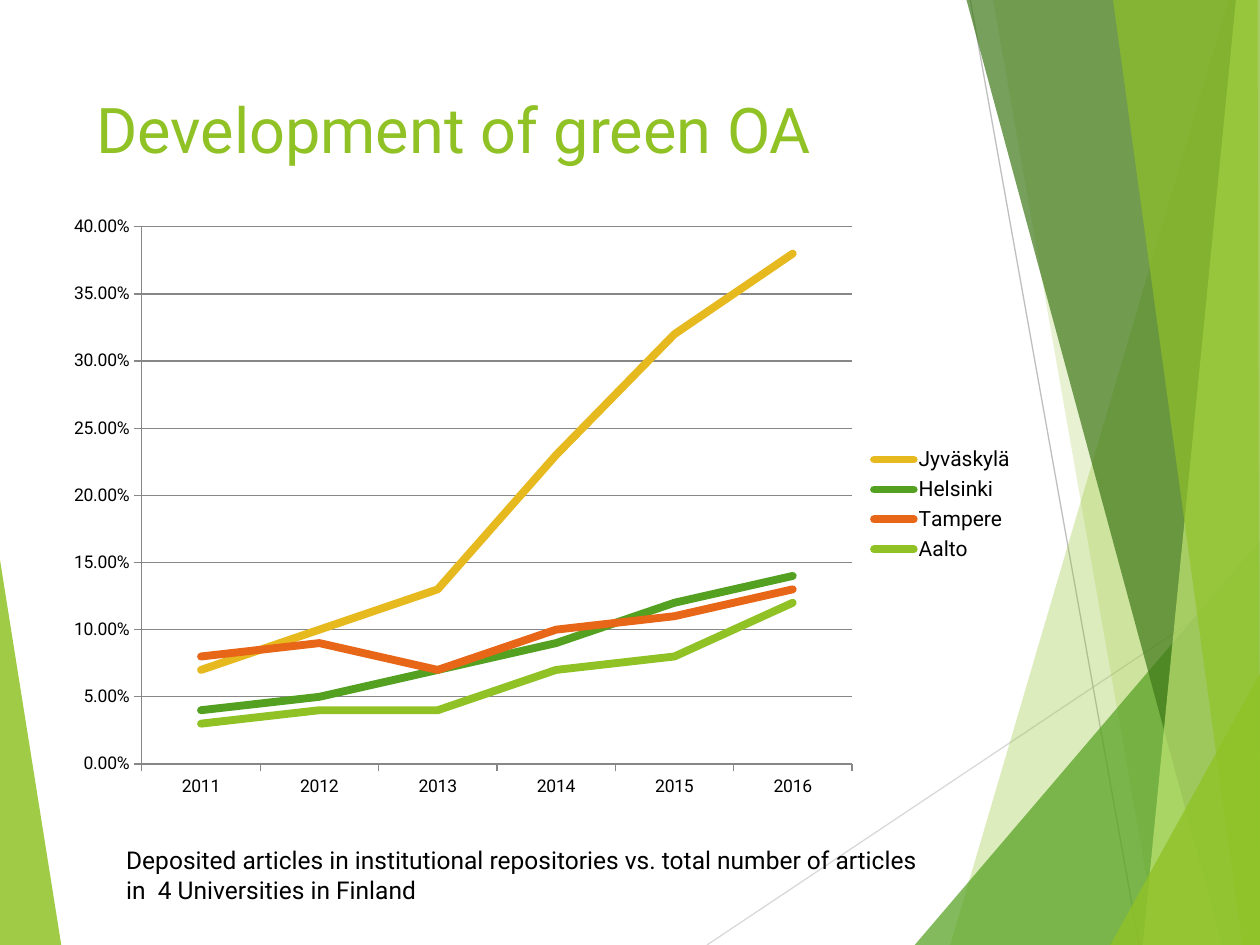
import pptx
import pptx.chart.data
import pptx.dml.color
import pptx.enum.chart
import pptx.enum.shapes
import pptx.enum.text
import pptx.oxml
import pptx.oxml.ns
import pptx.util


class Theme:
    font = "Roboto"
    lime, green, forest, pale = "90C226", "54A021", "3F7819", "C0E474"
    gold, orange = "E6B91E", "E76618"
    black, axis, light_line, dark_line = "000000", "878787", "D9D9D9", "BFBFBF"
    title_size, caption_size, legend_size, axis_size = 36, 14, 12, 10


def rgb(value):
    return pptx.dml.color.RGBColor.from_string(value)


def set_font(font, size, color):
    font.name = Theme.font
    font.size = pptx.util.Pt(size)
    font.color.rgb = rgb(color)


WIDTH, HEIGHT = 720, 540
presentation = pptx.Presentation()
presentation.slide_width = pptx.util.Pt(WIDTH)
presentation.slide_height = pptx.util.Pt(HEIGHT)
slide = presentation.slides.add_slide(presentation.slide_layouts[6])

# Thin background lines
for *ends, color in [
    (404, HEIGHT, WIDTH, 329, Theme.light_line),
    (554.5, 0, 651, HEIGHT, Theme.dark_line),
]:
    ray = slide.shapes.add_connector(
        pptx.enum.shapes.MSO_CONNECTOR.STRAIGHT, *map(pptx.util.Pt, ends))
    ray.line.color.rgb = rgb(color)
    ray.line.width = pptx.util.Pt(0.75)
    ray._element.spPr.append(pptx.oxml.parse_xml(
        f'<a:effectLst {pptx.oxml.ns.nsdecls("a")}/>'))

# Translucent facets: colour, opacity in percent, corners
facets = [
    (Theme.lime, 85, [(0, 320), (35, HEIGHT), (0, HEIGHT)]),
    (Theme.lime, 30, [(702, 0), (543, HEIGHT), (WIDTH, HEIGHT), (WIDTH, 0)]),
    (Theme.lime, 20, [(567.5, 0), (662, HEIGHT), (WIDTH, HEIGHT), (WIDTH, 0)]),
    (Theme.green, 72, [(522.7, HEIGHT), (WIDTH, 309), (WIDTH, HEIGHT)]),
    (Theme.forest, 70, [(552.3, 0), (698.4, HEIGHT), (WIDTH, HEIGHT), (WIDTH, 0)]),
    (Theme.pale, 70, [(706.3, 0), (653, HEIGHT), (WIDTH, HEIGHT), (WIDTH, 0)]),
    (Theme.lime, 65, [(636, 0), (710, HEIGHT), (WIDTH, HEIGHT), (718.6, 0)]),
    (Theme.lime, 80, [(634.5, HEIGHT), (WIDTH, 385), (WIDTH, HEIGHT)]),
]
for color, opacity, corners in facets:
    start, *others = [(pptx.util.Pt(x), pptx.util.Pt(y)) for x, y in corners]
    outline = slide.shapes.build_freeform(*start)
    outline.add_line_segments(others, close=True)
    facet = outline.convert_to_shape()
    facet.shadow.inherit = False
    facet.line.fill.background()
    facet.fill.solid()
    facet.fill.fore_color.rgb = rgb(color)
    fill_color = facet._element.spPr.find(".//" + pptx.oxml.ns.qn("a:srgbClr"))
    fill_color.append(pptx.oxml.parse_xml(
        f'<a:alpha {pptx.oxml.ns.nsdecls("a")} val="{opacity * 1000}"/>'))

# Title and caption
for area, wrap, size, color, lines in [
    ((48, 48, 500, 104), True, Theme.title_size, Theme.lime, ["Development of green OA"]),
    ((65, 479.5, 486, 41), False, Theme.caption_size, Theme.black,
     ["Deposited articles in institutional repositories vs. total number of articles",
      "in  4 Universities in Finland"]),
]:
    frame = slide.shapes.add_textbox(*map(pptx.util.Pt, area)).text_frame
    frame.word_wrap = wrap
    frame.vertical_anchor = pptx.enum.text.MSO_ANCHOR.TOP
    for number, line in enumerate(lines):
        paragraph = frame.add_paragraph() if number else frame.paragraphs[0]
        run = paragraph.add_run()
        run.text = line
        set_font(run.font, size, color)

# Share of deposited articles by university
universities = [
    ("Jyväskylä", Theme.gold, [0.07, 0.1, 0.13, 0.23, 0.32, 0.38]),
    ("Helsinki", Theme.green, [0.04, 0.05, 0.07, 0.09, 0.12, 0.14]),
    ("Tampere", Theme.orange, [0.08, 0.09, 0.07, 0.1, 0.11, 0.13]),
    ("Aalto", Theme.lime, [0.03, 0.04, 0.04, 0.07, 0.08, 0.12]),
]
shares = pptx.chart.data.CategoryChartData(number_format="0.00%")
shares.categories = [str(year) for year in range(2011, 2017)]
for name, _, values in universities:
    shares.add_series(name, values)
chart = slide.shapes.add_chart(
    pptx.enum.chart.XL_CHART_TYPE.LINE,
    *map(pptx.util.Pt, (31, 115.8, 556, 345)), shares).chart
set_font(chart.font, Theme.axis_size, Theme.black)
chart.has_title = False
chart.plots[0].vary_by_categories = False
for series, (_, color, _) in zip(chart.plots[0].series, universities):
    series.smooth = False
    series.marker.style = pptx.enum.chart.XL_MARKER_STYLE.NONE
    series.format.line.color.rgb = rgb(color)
    series.format.line.width = pptx.util.Pt(4.5)
    series.format.line._ln.set("cap", "rnd")

# Axes and gridlines
share_axis = chart.value_axis
share_axis.minimum_scale, share_axis.maximum_scale, share_axis.major_unit = 0, 0.4, 0.05
share_axis.tick_labels.number_format = "0.00%"
share_axis.tick_labels.number_format_is_linked = False
share_axis.has_major_gridlines = True
for axis_part in (share_axis, chart.category_axis, share_axis.major_gridlines):
    axis_part.format.line.color.rgb = rgb(Theme.axis)
    axis_part.format.line.width = pptx.util.Pt(0.75)
for axis in (share_axis, chart.category_axis):
    axis.major_tick_mark = pptx.enum.chart.XL_TICK_MARK.OUTSIDE

# Legend
chart.has_legend = True
chart.legend.position = pptx.enum.chart.XL_LEGEND_POSITION.RIGHT
chart.legend.include_in_layout = False
set_font(chart.legend.font, Theme.legend_size, Theme.black)

# Plot area position inside the chart
plot_area = chart._chartSpace.chart.plotArea
for old_layout in plot_area.findall(pptx.oxml.ns.qn("c:layout")):
    plot_area.remove(old_layout)
plot_area.insert(0, pptx.oxml.parse_xml(
    f'<c:layout {pptx.oxml.ns.nsdecls("c")}><c:manualLayout>'
    '<c:layoutTarget val="inner"/><c:xMode val="edge"/><c:yMode val="edge"/>'
    '<c:x val="0.09"/><c:y val="0.04"/><c:w val="0.73"/><c:h val="0.89"/>'
    '</c:manualLayout></c:layout>'))

presentation.save("out.pptx")
